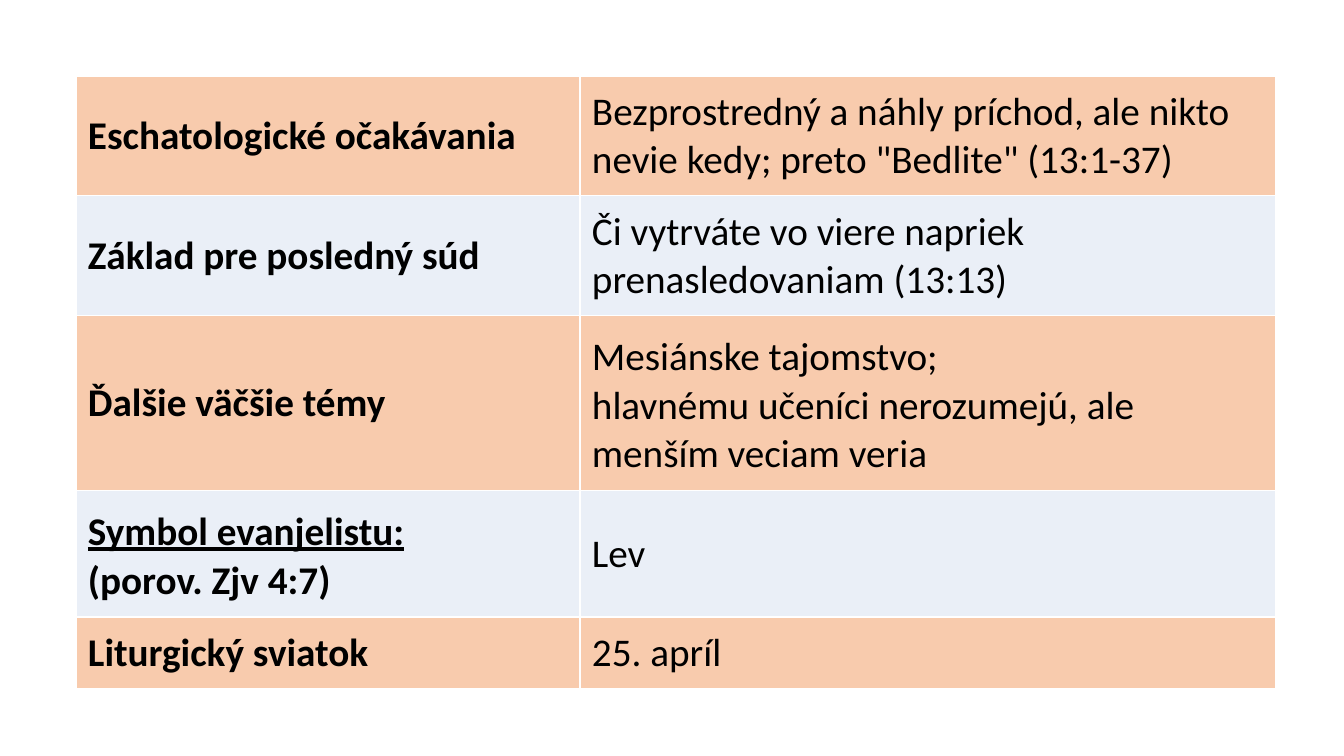
from lxml.etree import SubElement
from pptx import Presentation
from pptx.dml.color import RGBColor
from pptx.enum.text import MSO_ANCHOR as Anchor
from pptx.oxml.ns import qn
from pptx.util import Pt

ROWS = [
    (119, ["Eschatologické očakávania"],
     ["Bezprostredný a náhly príchod, ale nikto nevie kedy; preto \"Bedlite\" (13:1-37)"]),
    (120, ["Základ pre posledný súd"],
     ["Či vytrváte vo viere napriek prenasledovaniam (13:13)"]),
    (174, ["Ďalšie väčšie témy"],
     ["Mesiánske tajomstvo;", "hlavnému učeníci nerozumejú, ale menším veciam veria"]),
    (126, ["Symbol evanjelistu:", "(porov. Zjv 4:7)"], ["Lev"]),
    (72, ["Liturgický sviatok"], ["25. apríl"]),
]
COLUMNS = [504, 696]
BAND_FILLS = ["F8CBAD", "EAEFF7"]
LEFT, TOP, MARGIN = 76, 76, 12
TEXT_SIZE, BREAK_SIZE = 28, 32


def px(value):
    return round(value * 914400 / 100.8)


def color(value):
    return RGBColor.from_string(value)


def add_text(para, text, size=TEXT_SIZE, bold=False, underline=False):
    span = para.add_run()
    span.text = text
    font = span.font
    font.name, font.size = "Calibri", Pt(size)
    font.bold, font.underline = bold, underline
    font.color.rgb = color("000000")


def write_lines(para, lines, bold):
    for index, line in enumerate(lines):
        is_last = index == len(lines) - 1
        add_text(para, line, bold=bold, underline=bold and not is_last)
        if not is_last:
            add_text(para, " ", size=BREAK_SIZE, bold=bold)
            para.add_line_break()


def add_borders(cell):
    properties = cell._tc.get_or_add_tcPr()
    for index, side in enumerate(("lnL", "lnR", "lnT", "lnB")):
        line = properties.makeelement(qn(f"a:{side}"), {"w": str(Pt(1))})
        fill = SubElement(line, qn("a:solidFill"))
        SubElement(fill, qn("a:srgbClr"), val="FFFFFF")
        properties.insert(index, line)


def format_cell(cell, fill):
    cell.fill.solid()
    cell.fill.fore_color.rgb = color(fill)
    cell.vertical_anchor = Anchor.MIDDLE
    cell.margin_left = cell.margin_right = px(MARGIN)
    cell.margin_top = cell.margin_bottom = px(MARGIN)
    add_borders(cell)


def main():
    deck = Presentation()
    deck.slide_width, deck.slide_height = px(1344), px(756)
    page = deck.slides.add_slide(deck.slide_layouts[6])
    height = sum(row[0] for row in ROWS)
    table = page.shapes.add_table(
        len(ROWS), len(COLUMNS), px(LEFT), px(TOP), px(sum(COLUMNS)), px(height)
    ).table
    table.first_row = table.horz_banding = False
    for column, width in zip(table.columns, COLUMNS):
        column.width = px(width)
    for row_index, (row_height, *texts) in enumerate(ROWS):
        table.rows[row_index].height = px(row_height)
        for column_index, lines in enumerate(texts):
            cell = table.cell(row_index, column_index)
            format_cell(cell, BAND_FILLS[row_index % 2])
            write_lines(cell.text_frame.paragraphs[0], lines, bold=column_index == 0)
    deck.save("out.pptx")


if __name__ == "__main__":
    main()
